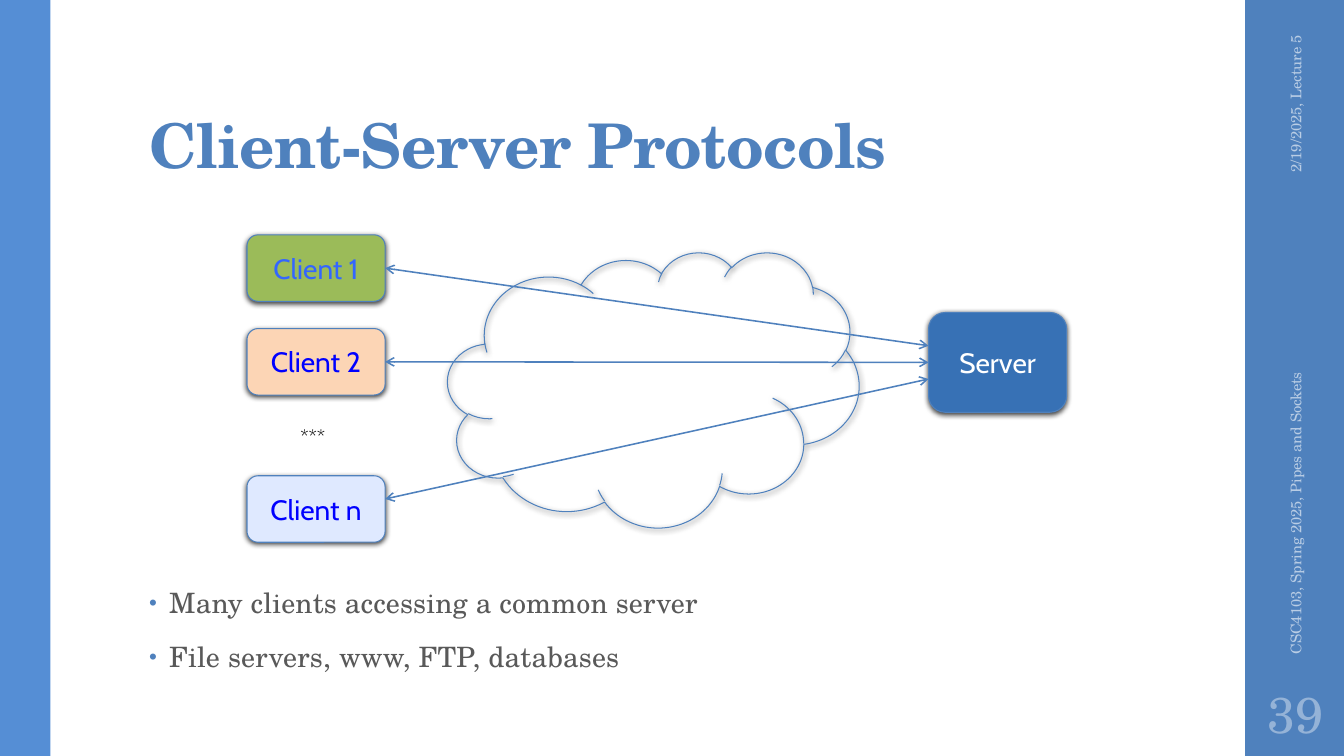
from lxml.etree import SubElement as Sub
from pptx import Presentation
from pptx.dml.color import RGBColor as Rgb
from pptx.enum.shapes import MSO_CONNECTOR as Link, MSO_SHAPE as Geo
from pptx.enum.text import MSO_ANCHOR as Anchor, PP_ALIGN as Align
from pptx.oxml.ns import qn
from pptx.util import Inches, Pt

BLUE = Rgb(0x4F, 0x81, 0xBD)
SKY = Rgb(0x55, 0x8E, 0xD5)
PALE = Rgb(0xB9, 0xCD, 0xE5)
STEEL = Rgb(0x95, 0xB3, 0xD7)
NAVY = Rgb(0x37, 0x71, 0xB5)
GREEN = Rgb(0x9B, 0xBB, 0x59)
PEACH = Rgb(0xFC, 0xD5, 0xB5)
ICE = Rgb(0xDF, 0xE9, 0xFF)
AZURE = Rgb(0x33, 0x66, 0xFF)
PURE = Rgb(0x00, 0x00, 0xFF)
GREY = Rgb(0x59, 0x59, 0x59)
BLACK = Rgb(0, 0, 0)
WHITE = Rgb(0xFF, 0xFF, 0xFF)

SERIF = "TeX Gyre Schola"
SANS = "Cabin"
CELL = 0.1


def grid(*cells):
    return [Inches(cell * CELL) for cell in cells]


def put(thing, form):
    for name, value in form.items():
        setattr(thing, name, value)


def node(parent, tag, **attrs):
    return Sub(parent, qn(tag), attrs)


class Board:
    def __init__(self, deck):
        self.slide = deck.slides.add_slide(deck.slide_layouts[6])
        self.shapes = self.slide.shapes
        self.edge = BLUE

    def shape(self, kind, at, fill=None):
        item = self.shapes.add_shape(kind, *grid(*at))
        item.shadow.inherit = False
        if fill is None:
            item.fill.background()
        else:
            item.fill.solid()
            item.fill.fore_color.rgb = fill
        return item

    def band(self, at, fill):
        self.shape(Geo.RECTANGLE, at, fill).line.fill.background()

    def raised(self, kind, at, fill=None):
        item = self.shape(kind, at, fill)
        item.line.color.rgb = self.edge
        item.line.width = Pt(0.75)
        glow = item._element.spPr.find(qn("a:effectLst"))
        cast = node(glow, "a:outerShdw", blurRad=str(Pt(4)), dist=str(Pt(1.2)),
                    dir="5400000", rotWithShape="0")
        tint = node(cast, "a:srgbClr", val=str(BLACK))
        node(tint, "a:alpha", val="75000")
        return item

    def letter(self, frame, lines, font, color, para=None, track=0):
        for i, line in enumerate(lines):
            text = frame.paragraphs[0] if i == 0 else frame.add_paragraph()
            put(text, para or {})
            run = text.add_run()
            run.text = line
            put(run.font, font)
            run.font.color.rgb = color
            if track:
                run._r.get_or_add_rPr().set("spc", str(track))

    def box(self, label, at, fill, color):
        item = self.raised(Geo.ROUNDED_RECTANGLE, at, fill)
        item.text_frame.vertical_anchor = Anchor.MIDDLE
        self.letter(item.text_frame, [label], {"name": SANS, "size": Pt(20)},
                    color, {"alignment": Align.CENTER})
        return item

    def text(self, lines, at, font, color, para=None, frame=None, turn=0, track=0):
        item = self.shapes.add_textbox(*grid(*at))
        item.rotation = turn
        put(item.text_frame, {"word_wrap": True, **(frame or {})})
        self.letter(item.text_frame, lines, font, color, para, track)
        return item

    def bullets(self, lines, at, font, color):
        para = {"line_spacing": 0.95, "space_after": Pt(16)}
        item = self.text(lines, at, font, color, para, track=10)
        for line in item.text_frame.paragraphs:
            props = line._p.get_or_add_pPr()
            dent = Inches(0.2)
            props.set("marL", str(dent))
            props.set("indent", str(-dent))
            node(node(props, "a:buClr"), "a:srgbClr", val=str(BLUE))
            node(props, "a:buSzPct", val="80000")
            node(props, "a:buFont", typeface="Arial")
            node(props, "a:buChar", char="•")

    def arrow(self, start, end, source=None, goal=None):
        wire = self.shapes.add_connector(Link.STRAIGHT, *grid(*start, *end))
        if source is not None:
            wire.begin_connect(source, 3)
        if goal is not None:
            wire.end_connect(goal, 1)
        wire.line.color.rgb = self.edge
        wire.line.width = Pt(1.1)
        props = wire._element.spPr
        line = props.find(qn("a:ln"))
        for tip in ("a:headEnd", "a:tailEnd"):
            node(line, tip, type="arrow")
        node(props, "a:effectLst")


def main():
    deck = Presentation()
    put(deck, {"slide_width": Inches(13.33), "slide_height": Inches(7.5)})
    board = Board(deck)

    board.band((123.5, 0, 9.8, 75), BLUE)
    board.band((0, 0, 5, 75), SKY)
    board.text(["Client-Server Protocols"], (13.8, 3.2, 106, 15.3),
               {"name": SERIF, "size": Pt(44), "bold": True}, BLUE,
               {"line_spacing": 0.9},
               {"vertical_anchor": Anchor.BOTTOM, "margin_top": Inches(0.03)},
               track=-50)
    board.bullets(["Many clients accessing a common server",
                   "File servers, www, FTP, databases"],
                  (13.8, 57.8, 94, 9.8), {"name": SERIF, "size": Pt(20)}, GREY)

    middle = {"vertical_anchor": Anchor.MIDDLE}
    small = {"name": SERIF, "size": Pt(10.5)}
    for label, at, align in (
        ("2/19/2025, Lecture 5", (118.1, 10.9, 20.8, 4), Align.RIGHT),
        ("CSC4103, Spring 2025, Pipes and Sockets", (108.9, 44.3, 39.2, 4), Align.LEFT),
    ):
        board.text([label], at, small, PALE, {"alignment": align}, middle, turn=270)
    tight = {"margin_left": Inches(0.05), "margin_right": Inches(0.05)}
    board.text(["39"], (123.5, 67.5, 10, 6.5), {"name": SERIF, "size": Pt(36)},
               STEEL, {"alignment": Align.CENTER}, {**middle, **tight})

    board.raised(Geo.CLOUD, (44.4, 25, 40.8, 27.3))
    server = board.box("Server", (92.1, 31, 13.7, 9.9), NAVY, WHITE)
    first, second, last = [
        board.box(f"Client {name}", (24.5, top, 13.7, 6.6), fill, color)
        for name, top, fill, color in (
            ("1", 23.3, GREEN, AZURE),
            ("2", 32.6, PEACH, PURE),
            ("n", 47.2, ICE, PURE),
        )
    ]
    board.text(["***"], (28.8, 41.7, 5.7, 3.4), {"name": SANS, "size": Pt(14)}, BLACK)

    for left, right, source, goal in (
        (26.6, 34.3, first, None),
        (35.9, 35.9, second, server),
        (49.5, 37.6, None, None),
    ):
        board.arrow((38.2, left), (92.1, right), source, goal)

    deck.save("out.pptx")


if __name__ == "__main__":
    main()
